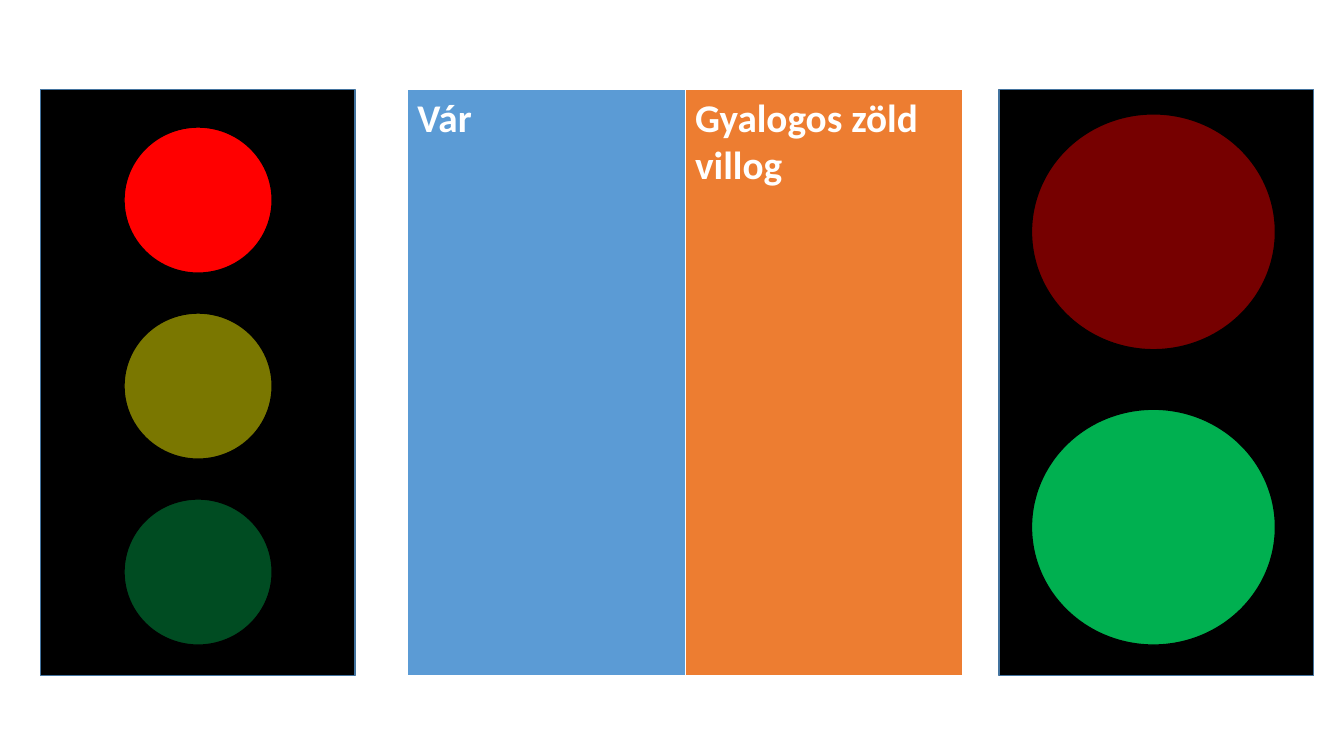
from pptx import Presentation
from pptx.dml.color import RGBColor
from pptx.enum import shapes
from pptx.util import Pt

PX = 9144
BLACK = RGBColor(0x00, 0x00, 0x00)
WHITE = RGBColor(0xFF, 0xFF, 0xFF)
FRAME_BLUE = RGBColor(0x43, 0x73, 0x9E)
RED_ON = RGBColor(0xFF, 0x00, 0x00)
RED_OFF = RGBColor(0x76, 0x00, 0x00)
YELLOW_OFF = RGBColor(0x7A, 0x77, 0x00)
GREEN_ON = RGBColor(0x00, 0xB0, 0x50)
GREEN_OFF = RGBColor(0x00, 0x4C, 0x22)
CAR_BLUE = RGBColor(0x5B, 0x9B, 0xD5)
WALKER_ORANGE = RGBColor(0xED, 0x7D, 0x31)

SLIDE_SIZE = (1333, 750)
TOP, HEIGHT = 89, 581
HOUSING_WIDTH = 312
TRAFFIC_LIGHTS = [
    dict(left=40, lamp_left=123, lamp_top=126, lamp_size=(147, 145),
         pitch=184.5, lamps=[RED_ON, YELLOW_OFF, GREEN_OFF]),
    dict(left=991, lamp_left=1023, lamp_top=113, lamp_size=(242, 234),
         pitch=293, lamps=[RED_OFF, GREEN_ON]),
]
STATES = [("Vár", CAR_BLUE), ("Gyalogos zöld villog", WALKER_ORANGE)]
STATES_LEFT, STATES_WIDTH = 404, 551
STATE_FONT = dict(name="Calibri", size=Pt(28), bold=True)


def emu(*lengths):
    return [round(length * PX) for length in lengths]


def add_part(light, kind, box, fill, outline):
    part = light.shapes.add_shape(kind, *emu(*box))
    part.shadow.inherit = False
    part.fill.solid()
    part.fill.fore_color.rgb = fill
    part.line.color.rgb = outline
    part.line.width = Pt(1)


def add_traffic_light(slide, left, lamp_left, lamp_top, lamp_size, pitch, lamps):
    light = slide.shapes.add_group_shape()
    add_part(light, shapes.MSO_SHAPE.RECTANGLE,
             (left, TOP, HOUSING_WIDTH, HEIGHT), BLACK, FRAME_BLUE)
    for i, lamp in enumerate(lamps):
        add_part(light, shapes.MSO_SHAPE.OVAL,
                 (lamp_left, lamp_top + i * pitch, *lamp_size), lamp, BLACK)


def add_states(slide):
    states = slide.shapes.add_table(
        1, len(STATES), *emu(STATES_LEFT, TOP, STATES_WIDTH, HEIGHT)).table
    for cell, (label, color) in zip(states.rows[0].cells, STATES):
        cell.text = label
        cell.fill.solid()
        cell.fill.fore_color.rgb = color
        font = cell.text_frame.paragraphs[0].runs[0].font
        for key, value in STATE_FONT.items():
            setattr(font, key, value)
        font.color.rgb = WHITE


def main():
    prs = Presentation()
    prs.slide_width, prs.slide_height = emu(*SLIDE_SIZE)
    slide = prs.slides.add_slide(prs.slide_layouts[6])
    for traffic_light in TRAFFIC_LIGHTS:
        add_traffic_light(slide, **traffic_light)
    add_states(slide)
    prs.save("out.pptx")


if __name__ == "__main__":
    main()
